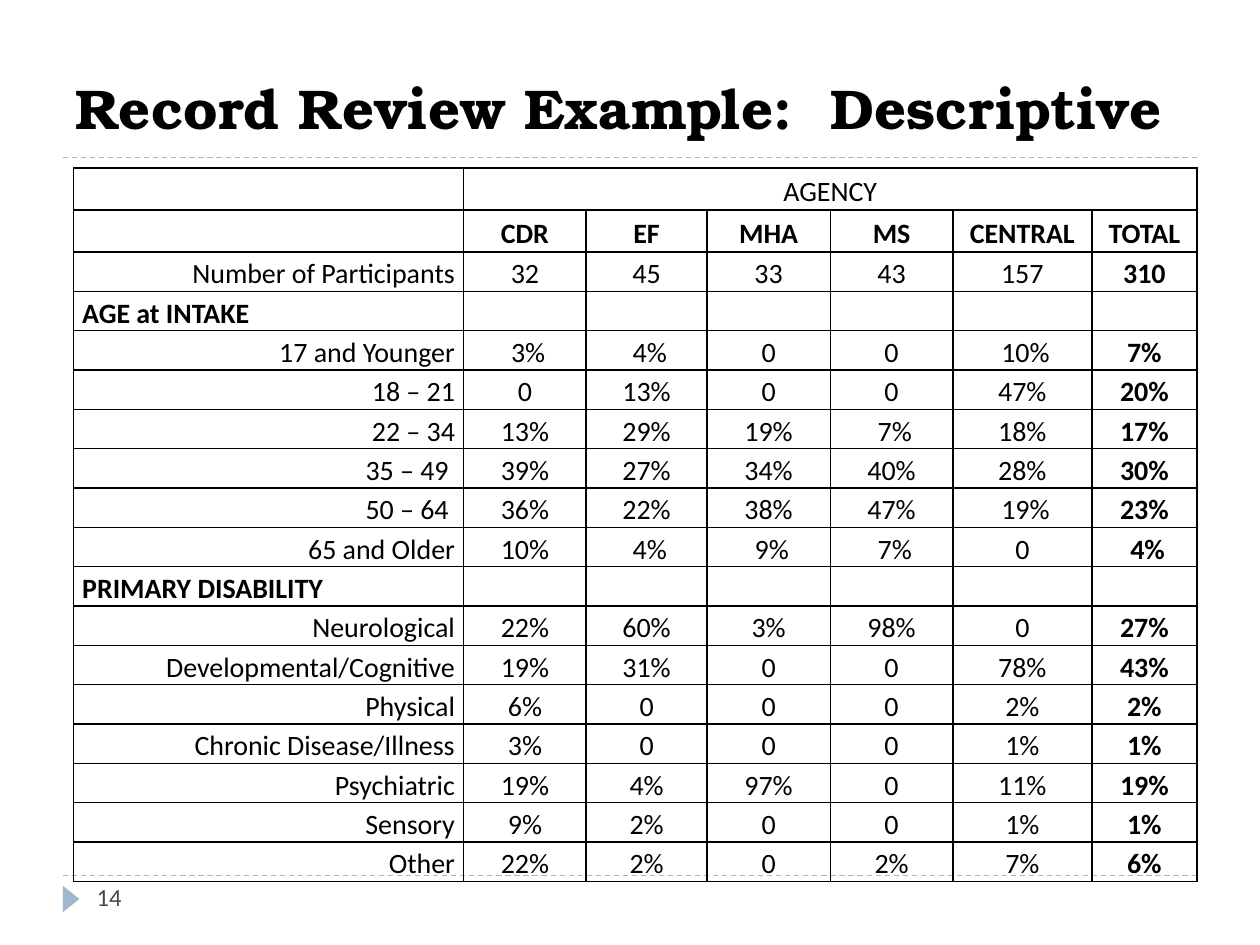
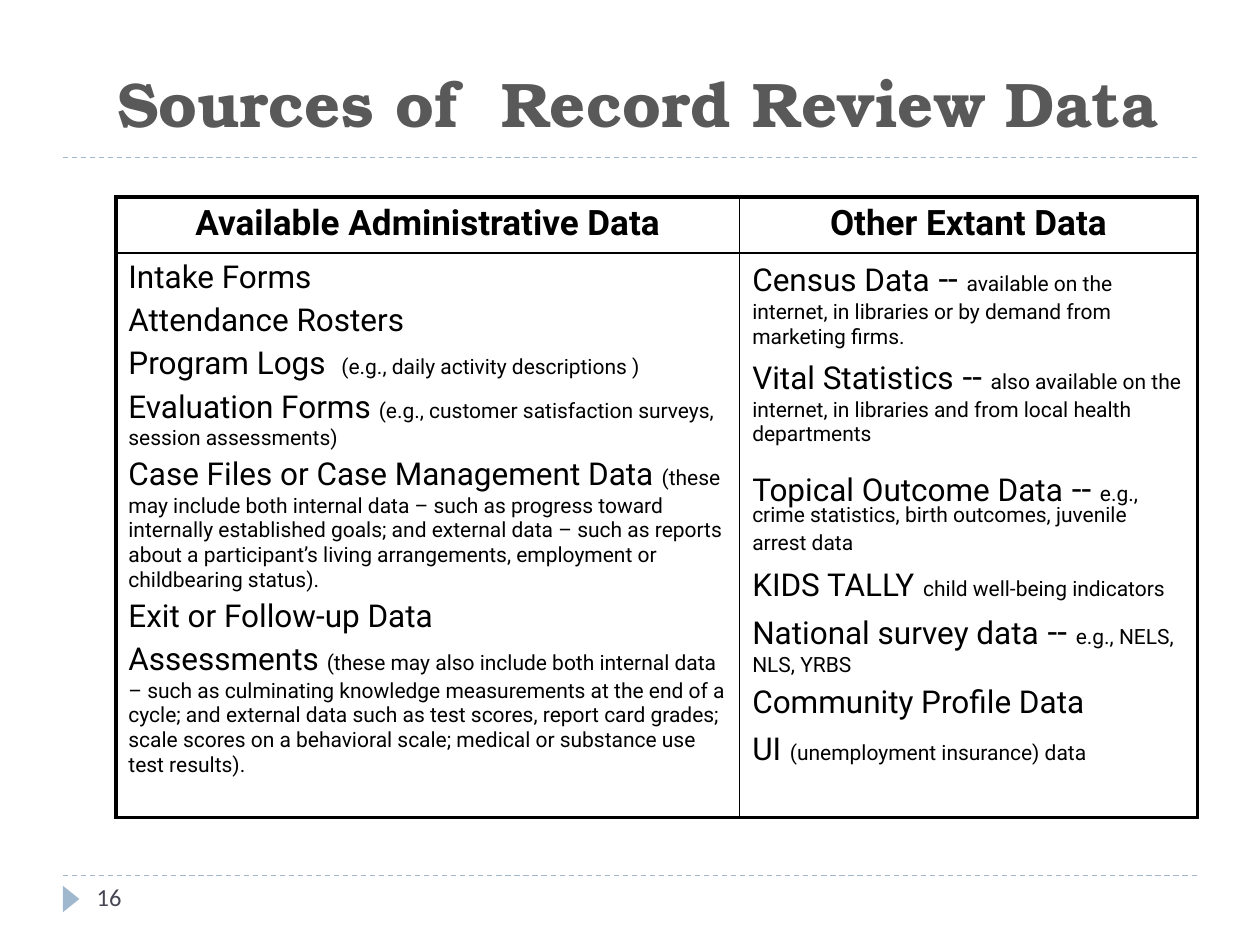
from dataclasses import dataclass
from typing import NamedTuple

from lxml import etree
from pptx import Presentation
from pptx.dml.color import RGBColor
from pptx.enum import dml, shapes, text
from pptx.oxml import ns
from pptx.util import Pt

COLORS = {"black": "000000", "title_gray": "595959", "accent": "9FB8CD", "number": "464653"}
TITLE_FONT, BODY_FONT, SOURCE_FONT = "TeX Gyre Bonum", "Calibri", "Roboto"
HEAD_SIZE, JOINT_SIZE, DETAIL_SIZE = 18, 20, 12
LEFT, CENTER, RIGHT = text.PP_ALIGN.LEFT, text.PP_ALIGN.CENTER, text.PP_ALIGN.RIGHT


class Box(NamedTuple):
    left: float
    top: float
    width: float
    height: float

    def lengths(self) -> list:
        return [Pt(value) for value in self]


@dataclass
class Header:
    title: str
    box: Box
    size: float
    color: str
    number: str


@dataclass
class Entry:
    """A source: large heading, larger joint, small detail."""
    head: str
    detail: str = ""
    joint: str = ""
    tail: str = ""
    spacing: float = 1.0
    before: float | None = None

    def runs(self) -> list:
        parts = [(self.head, HEAD_SIZE), (self.joint, JOINT_SIZE),
                 (self.detail, DETAIL_SIZE), (self.tail, JOINT_SIZE)]
        return [(words, size) for words, size in parts if words]


AGENCIES = ("CDR", "EF", "MHA", "MS", "CENTRAL", "TOTAL")
AGENCY_WIDTHS = (223, 70, 69, 70.5, 70, 79.5, 60)
HEADING_HEIGHT, RECORD_HEIGHT = 24, 22.5
RECORDS = [
    ("Number of Participants", "32", "45", "33", "43", "157", "310"),
    ("AGE at INTAKE",),
    ("17 and Younger", " 3%", " 4%", "0", "0", " 10%", "7%"),
    ("18 – 21", "0", "13%", "0", "0", "47%", "20%"),
    ("22 – 34", "13%", "29%", "19%", " 7%", "18%", "17%"),
    ("35 – 49 ", "39%", "27%", "34%", "40%", "28%", "30%"),
    ("50 – 64 ", "36%", "22%", "38%", "47%", " 19%", "23%"),
    ("65 and Older", "10%", " 4%", " 9%", " 7%", "0", " 4%"),
    ("PRIMARY DISABILITY",),
    ("Neurological", "22%", "60%", "3%", "98%", "0", "27%"),
    ("Developmental/Cognitive", "19%", "31%", "0", "0", "78%", "43%"),
    ("Physical", "6%", "0", "0", "0", "2%", "2%"),
    ("Chronic Disease/Illness", "3%", "0", "0", "0", "1%", "1%"),
    ("Psychiatric", "19%", "4%", "97%", "0", "11%", "19%"),
    ("Sensory", "9%", "2%", "0", "0", "1%", "1%"),
    ("Other", "22%", "2%", "0", "2%", "7%", "6%"),
]

SOURCES = {
    "Available Administrative Data": [
        Entry("Intake Forms"),
        Entry("Attendance Rosters"),
        Entry("Program Logs  ", "(e.g., daily activity descriptions )"),
        Entry("Evaluation Forms ", "(e.g., customer satisfaction surveys, session assessments)"),
        Entry("Case Files or Case Management Data ",
              "(these may include both internal data – such as progress toward internally "
              "established goals; and external data – such as reports about a participant’s "
              "living arrangements, employment or childbearing status)."),
        Entry("Exit or Follow-up Data"),
        Entry("Assessments ",
              "(these may also include both internal data – such as culminating knowledge "
              "measurements at the end of a cycle; and external data such as test scores, "
              "report card grades; scale scores on a behavioral scale; medical or substance "
              "use test results)."),
    ],
    "Other Extant Data": [
        Entry("Census Data",
              "available on the internet, in libraries or by demand from marketing firms.", " -- "),
        Entry("Vital Statistics",
              "also available on the internet, in libraries and from local health departments",
              " -- "),
        Entry("Topical Outcome Data",
              "e.g., crime statistics, birth outcomes, juvenile arrest data",
              " -- ", tail=" ", spacing=0.75, before=17),
        Entry("KIDS TALLY", "child well-being indicators", " "),
        Entry("National survey data", "e.g., NELS, NLS, YRBS", " -- "),
        Entry("Community Profile Data"),
        Entry("UI", "(unemployment insurance) data", " "),
    ],
}


def rgb(color: str) -> RGBColor:
    return RGBColor.from_string(COLORS[color])


def set_font(p, name: str, color: str, size: float | None = None, bold: bool = False) -> None:
    p.font.name = name
    p.font.color.rgb = rgb(color)
    p.font.bold = bold
    if size:
        p.font.size = Pt(size)


def add_text(s, box: Box, words: str, name: str, color: str, size: float,
             bold: bool = False, anchor=text.MSO_ANCHOR.TOP) -> None:
    tf = s.shapes.add_textbox(*box.lengths()).text_frame
    tf.word_wrap = True
    tf.vertical_anchor = anchor
    tf.text = words
    set_font(tf.paragraphs[0], name, color, size, bold)


def add_rule(s, y: float) -> None:
    line = s.shapes.add_connector(shapes.MSO_CONNECTOR.STRAIGHT, Pt(36), Pt(y), Pt(684), Pt(y))
    line.line.color.rgb = rgb("accent")
    line.line.width = Pt(0.75)
    line.line.dash_style = dml.MSO_LINE.DASH
    etree.SubElement(line._element.spPr, ns.qn("a:effectLst"))


def add_slide(prs, header: Header):
    """Add a slide with rules, page marker, page number and title."""
    s = prs.slides.add_slide(prs.slide_layouts[6])
    for y in (500.4, 90):
        add_rule(s, y)
    marker = s.shapes.add_shape(shapes.MSO_SHAPE.ISOSCELES_TRIANGLE,
                                *Box(33.1, 509, 15.1, 9.4).lengths())
    marker.rotation = 90
    marker.shadow.inherit = False
    marker.fill.solid()
    marker.fill.fore_color.rgb = rgb("accent")
    marker.line.fill.background()
    add_text(s, header.box, header.title, TITLE_FONT, header.color, header.size,
             True, text.MSO_ANCHOR.BOTTOM)
    add_text(s, Box(48.2, 500.4, 156, 28.8), header.number, BODY_FONT, "number", 14)
    return s


def set_borders(cell, widths: dict[str, float]) -> None:
    tc_pr = cell._tc.get_or_add_tcPr()
    for side, width in widths.items():
        ln = etree.SubElement(tc_pr, ns.qn(f"a:ln{side}"), w=str(Pt(width)))
        fill = etree.SubElement(ln, ns.qn("a:solidFill"))
        etree.SubElement(fill, ns.qn("a:srgbClr"), val=COLORS["black"])


def add_grid(s, left: float, top: float, widths, heights, outer: float = 1):
    """Add an unfilled table with 1 pt inner borders and the given outer width."""
    box = Box(left, top, sum(widths), sum(heights))
    table = s.shapes.add_table(len(heights), len(widths), *box.lengths()).table
    table.first_row = table.horz_banding = False
    for column, width in zip(table.columns, widths):
        column.width = Pt(width)
    for row, height in zip(table.rows, heights):
        row.height = Pt(height)
    last_row, last_col = len(heights) - 1, len(widths) - 1
    for i in range(len(heights)):
        for j in range(len(widths)):
            cell = table.cell(i, j)
            on_edge = {"L": j == 0, "R": j == last_col, "T": i == 0, "B": i == last_row}
            set_borders(cell, {side: outer if edge else 1 for side, edge in on_edge.items()})
            cell.fill.background()
    return table


def fill_record_cell(cell, words: str, align, bold: bool) -> None:
    cell.vertical_anchor = text.MSO_ANCHOR.MIDDLE
    cell.margin_left = cell.margin_right = Pt(5)
    cell.margin_top = cell.margin_bottom = Pt(0)
    if words:
        cell.text = words
        p = cell.text_frame.paragraphs[0]
        p.alignment = align
        p.line_spacing = 1.15
        set_font(p, BODY_FONT, "black", 16, bold)


def build_descriptive(prs) -> None:
    s = add_slide(prs, Header("Record Review Example:  Descriptive",
                              Box(36, 21.6, 648, 62.6), 32, "black", "14"))
    rows = [("", "AGENCY"), ("", *AGENCIES), *RECORDS]
    heights = [HEADING_HEIGHT] * 2 + [RECORD_HEIGHT] * len(RECORDS)
    table = add_grid(s, 42, 96, AGENCY_WIDTHS, heights)
    total = len(AGENCIES)
    for i, row in enumerate(rows):
        is_section = len(row) == 1
        for j in range(total + 1):
            words = row[j] if j < len(row) else ""
            align = CENTER if j else LEFT if is_section else RIGHT
            fill_record_cell(table.cell(i, j), words, align, is_section or i == 1 or j == total)
    table.cell(0, 1).merge(table.cell(0, total))


def fill_entries(tf, entries: list[Entry]) -> None:
    for i, entry in enumerate(entries):
        p = tf.add_paragraph() if i else tf.paragraphs[0]
        set_font(p, SOURCE_FONT, "black")
        p.line_spacing = entry.spacing
        runs = entry.runs()
        largest = max(size for _, size in runs)
        p.space_before = Pt(0.2 * largest if entry.before is None else entry.before)
        for words, size in runs:
            r = p.add_run()
            r.text = words
            r.font.size = Pt(size)


def build_sources(prs) -> None:
    s = add_slide(prs, Header("Sources of  Record Review Data",
                              Box(59.8, 16.6, 642, 67), 36, "title_gray", "16"))
    table = add_grid(s, 66.2, 112.5, (356.5, 261.5), (32, 322.5), outer=2.25)
    for j, (heading, entries) in enumerate(SOURCES.items()):
        top = table.cell(0, j)
        top.text = heading
        p = top.text_frame.paragraphs[0]
        p.alignment = CENTER
        p.space_before = Pt(4)
        set_font(p, SOURCE_FONT, "black", 20, True)
        fill_entries(table.cell(1, j).text_frame, entries)


def main() -> None:
    prs = Presentation()
    prs.slide_width, prs.slide_height = Pt(720), Pt(540)
    build_descriptive(prs)
    build_sources(prs)
    prs.save("out.pptx")


if __name__ == "__main__":
    main()
